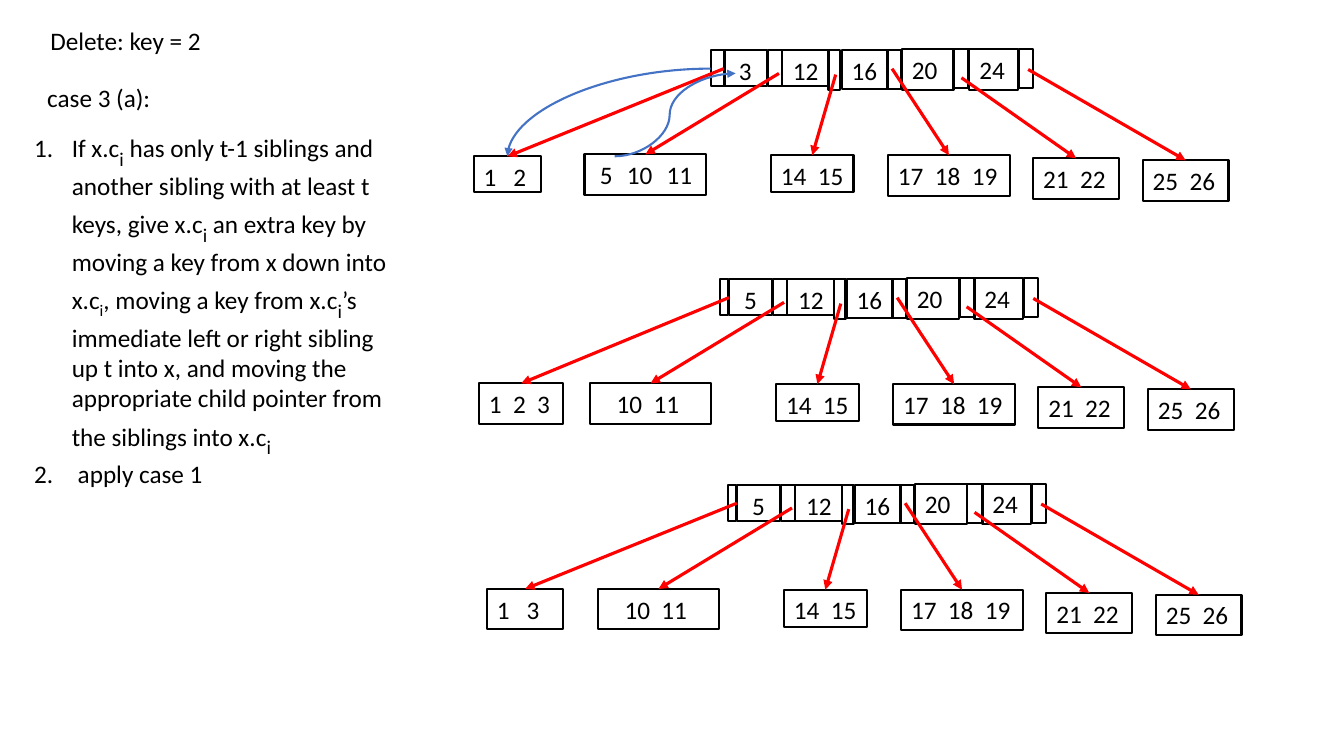
import pptx
import pptx.util
import pptx.dml.color
import pptx.enum.shapes
import pptx.enum.text
import pptx.oxml.ns
from lxml import etree

Cm = pptx.util.Cm
Pt = pptx.util.Pt
qn = pptx.oxml.ns.qn

# ---- Content (lengths in cm) ----
FONT, BLACK, RED, BLUE = "Calibri", "000000", "FF0000", "4472C4"
HEADINGS = [  # text, left, top, width
    ("Delete: key = 2", 1.02, 0.51, 6.45),
    ("case 3 (a):", 0.94, 1.96, 3.51),
]
STEPS_BOX = (0.61, 3.0, 9.75, 7.95)
STEPS = [  # hanging indent, then (text, size, is subscript)
    (0.95, [
        ("If x.c", 18, False), ("i", 24, True),
        (" has only t-1 siblings and another sibling with at least t keys, give x.c", 18, False),
        ("i", 24, True),
        (" an extra key by moving a key from x down into x.c", 18, False), ("i", 20, True),
        (", moving a key from x.c", 18, False), ("i", 24, True),
        ("’s immediate left or right sibling up t into x, and moving the "
         "appropriate child pointer from the siblings into x.c", 18, False),
        ("i", 24, True)]),
    (1.1, [("apply case 1", 18, False)]),
]

# Root parts and leaves, placed as in the top tree
KEY_CELLS = [  # key, left, top, width, height, centred
    ("12", 19.71, 1.27, 1.19, 0.91, True),
    ("16", 21.21, 1.27, 1.17, 0.97, False),
    ("20", 22.73, 1.24, 1.3, 1.02, False),
    ("24", 24.43, 1.24, 1.22, 1.02, False),
]
FIRST_KEY_CELL = (18.24, 1.27, 1.09, 0.91)
POINTER_CELLS = [
    (19.35, 1.27, 0.36, 0.91), (20.88, 1.27, 0.3, 0.99), (22.35, 1.27, 0.36, 0.97),
    (24.05, 1.24, 0.36, 0.99), (25.68, 1.24, 0.36, 0.99),
]
ARROW_STARTS = [(18.24, 1.73), (19.63, 1.85), (21.06, 1.88),
                (22.48, 1.73), (24.23, 1.96), (25.91, 1.75)]
SHARED_LEAVES = [  # keys, box, inset, gap between keys
    (("14", "15"), (19.43, 3.91, 2.08, 0.94), 0.25, 0.29),
    (("17", "18", "19"), (22.38, 3.91, 3.07, 1.02), 0.25, 0.29),
    (("21", "22"), (26.04, 3.99, 2.16, 1.02), 0.25, 0.29),
    (("25", "26"), (28.8, 4.04, 2.16, 1.02), 0.25, 0.29),
]
SECOND_LEAF = (14.73, 3.89, 3.07, 1.02)
TREES = [  # offset, first key, first pointer cell, first two leaves
    ((0, 0), "3", (17.91, 1.27, 0.36, 0.91),
     [(("1", "2"), (11.94, 3.94, 1.7, 0.89), 0.25, 0.43),
      (("5", "10", "11"), SECOND_LEAF, 0.39, 0.36)]),
    ((0.13, 5.77), "5", (18.01, 1.27, 0.2, 0.91),
     [(("1", "2", "3"), (11.94, 3.89, 2.13, 1.02), 0.25, 0.29),
      (("10", "11"), SECOND_LEAF, 0.68, 0.29)]),
    ((0.33, 10.95), "5", (18.01, 1.27, 0.2, 0.91),
     [(("1", "3"), (11.94, 3.89, 1.93, 1.02), 0.25, 0.43),
      (("10", "11"), SECOND_LEAF, 0.68, 0.29)]),
]
CURVES = [  # preset, start, end, adjustment
    ("curvedConnector3", (15.49, 3.94), (18.54, 1.85), 45500),
    ("curvedConnector2", (17.91, 1.73), (12.79, 3.94), None),
]
DIGIT_WIDTH = 0.32


# ---- Helpers ----
def color(value):
    return pptx.dml.color.RGBColor.from_string(value)


def format_run(run, size=18):
    run.font.name = FONT
    run.font.size = Pt(size)
    run.font.color.rgb = color(BLACK)


def add_box(shapes, box, offset, text="", inset=0.25, centred=False):
    left, top, width, height = box
    shape = shapes.add_shape(pptx.enum.shapes.MSO_SHAPE.RECTANGLE, Cm(left + offset[0]),
                             Cm(top + offset[1]), Cm(width), Cm(height))
    shape.shadow.inherit = False
    shape.fill.background()
    shape.line.color.rgb = color(BLACK)
    shape.line.width = Pt(1.5)
    if text:
        frame = shape.text_frame
        frame.text = text
        frame.vertical_anchor = pptx.enum.text.MSO_ANCHOR.TOP
        frame.margin_left, frame.margin_right = Cm(0 if centred else inset), 0
        paragraph = frame.paragraphs[0]
        align = pptx.enum.text.PP_ALIGN
        paragraph.alignment = align.CENTER if centred else align.LEFT
        format_run(paragraph.runs[0])
    return shape


def add_leaf(shapes, offset, keys, box, inset, gap):
    shape = add_box(shapes, box, offset, "\t".join(keys), inset)
    properties = shape.text_frame.paragraphs[0]._p.get_or_add_pPr()
    tab_list = etree.SubElement(properties, qn("a:tabLst"))
    position = 0
    for key in keys[:-1]:
        position += len(key) * DIGIT_WIDTH + gap
        etree.SubElement(tab_list, qn("a:tab"), pos=str(int(Cm(position))), algn="l")
    return shape


def add_arrow(shapes, kind, start, end, line_color, width):
    arrow = shapes.add_connector(kind, *[Cm(value) for value in (*start, *end)])
    arrow.line.color.rgb = color(line_color)
    arrow.line.width = Pt(width)
    etree.SubElement(arrow.line._get_or_add_ln(), qn("a:tailEnd"), type="triangle")
    etree.SubElement(arrow._element.spPr, qn("a:effectLst"))
    return arrow


def add_tree(slide, offset, first_key, first_pointer, first_leaves):
    shapes = slide.shapes.add_group_shape().shapes
    for cell in [first_pointer] + POINTER_CELLS:
        add_box(shapes, cell, offset)
    for key, *cell, centred in [(first_key, *FIRST_KEY_CELL, True)] + KEY_CELLS:
        add_box(shapes, cell, offset, key, centred=centred)
    for start, leaf in zip(ARROW_STARTS, first_leaves + SHARED_LEAVES):
        leaf_shape = add_leaf(shapes, offset, *leaf)
        left, top, width, _ = leaf[1]
        arrow = add_arrow(shapes, pptx.enum.shapes.MSO_CONNECTOR.STRAIGHT,
                          (start[0] + offset[0], start[1] + offset[1]),
                          (left + width / 2 + offset[0], top + offset[1]), RED, 2.25)
        arrow.end_connect(leaf_shape, 0)


def add_text_box(slide, left, top, width, height):
    box = slide.shapes.add_textbox(Cm(left), Cm(top), Cm(width), Cm(height))
    box.text_frame.word_wrap = True
    return box.text_frame


# ---- Slide ----
presentation = pptx.Presentation()
presentation.slide_width = Cm(33.87)
presentation.slide_height = Cm(19.05)
slide = presentation.slides.add_slide(presentation.slide_layouts[6])

# Headings
for text, left, top, width in HEADINGS:
    frame = add_text_box(slide, left, top, width, 1.02)
    frame.text = text
    format_run(frame.paragraphs[0].runs[0])

# Numbered steps
frame = add_text_box(slide, *STEPS_BOX)
for index, (indent, pieces) in enumerate(STEPS):
    paragraph = frame.add_paragraph() if index else frame.paragraphs[0]
    properties = paragraph._p.get_or_add_pPr()
    properties.set("marL", str(int(Cm(indent))))
    properties.set("indent", str(-int(Cm(indent))))
    etree.SubElement(properties, qn("a:buFont"), typeface="+mj-lt")
    etree.SubElement(properties, qn("a:buAutoNum"), type="arabicPeriod")
    for text, size, is_subscript in pieces:
        run = paragraph.add_run()
        run.text = text
        format_run(run, size)
        if is_subscript:
            run.font._element.set("baseline", "-25000")

# Trees
for tree in TREES:
    add_tree(slide, *tree)

# Curved arrows showing the keys that move
for preset, start, end, adjustment in CURVES:
    curve = add_arrow(slide.shapes, pptx.enum.shapes.MSO_CONNECTOR.CURVE, start, end, BLUE, 1.5)
    geometry = curve._element.spPr.find(qn("a:prstGeom"))
    geometry.set("prst", preset)
    if adjustment:
        etree.SubElement(geometry.find(qn("a:avLst")), qn("a:gd"),
                         name="adj1", fmla=f"val {adjustment}")

presentation.save("out.pptx")
